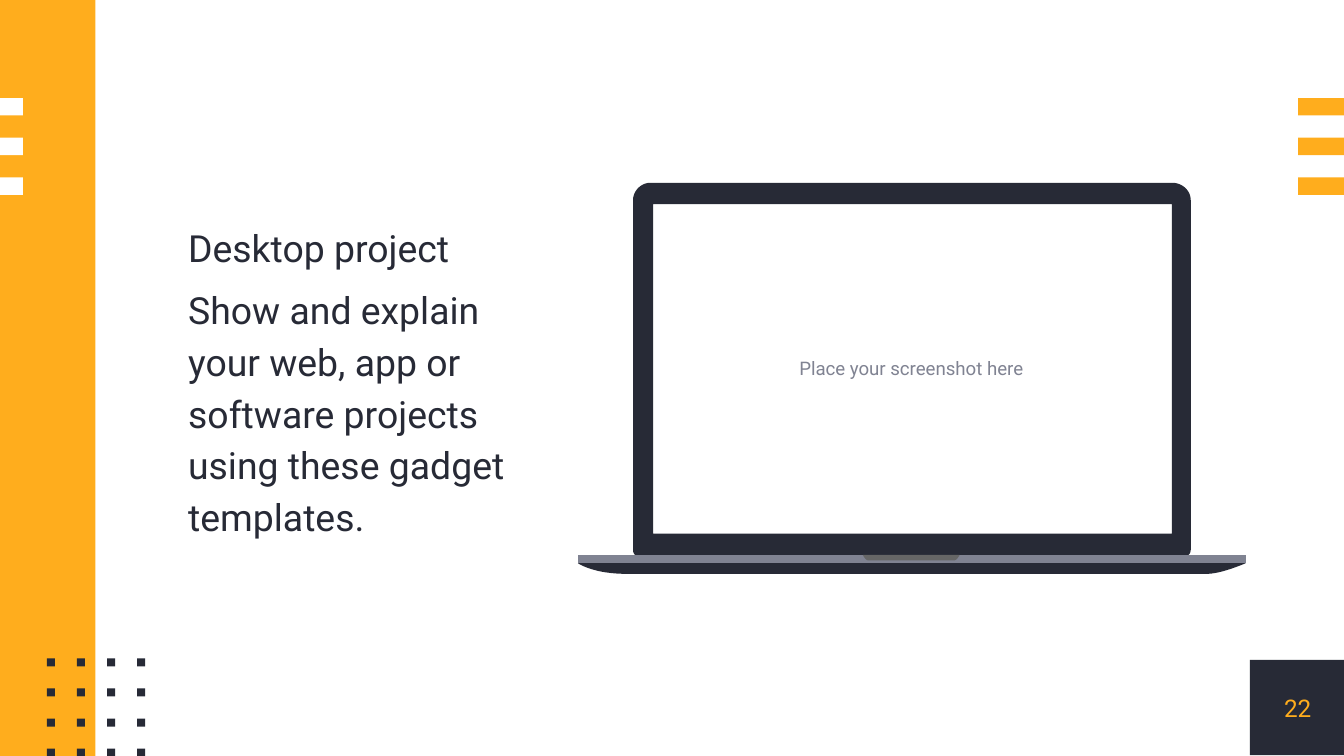
from dataclasses import dataclass
from itertools import product

from pptx import Presentation
from pptx.dml.color import RGBColor
from pptx.enum.shapes import MSO_SHAPE
from pptx.enum.text import MSO_ANCHOR, PP_ALIGN
from pptx.util import Inches, Pt

RECTANGLE = MSO_SHAPE.RECTANGLE
MIDDLE = MSO_ANCHOR.MIDDLE
LEFT, CENTER = PP_ALIGN.LEFT, PP_ALIGN.CENTER

FONT = "Roboto"
COLORS = {
    "dark": "272A36",
    "accent": "FFAD1D",
    "white": "FFFFFF",
    "muted": "808392",
    "notch": "666666",
}
SLIDE_WIDTH = 10
SLIDE_HEIGHT = SLIDE_WIDTH * 9 / 16
CURVE_STEPS = 12

Point = tuple[float, float]


@dataclass(frozen=True)
class Box:
    left: float
    top: float
    width: float
    height: float

    def emu(self) -> list[int]:
        return [Inches(v) for v in (self.left, self.top, self.width, self.height)]


@dataclass(frozen=True)
class Curve:
    """Cubic Bezier from the preceding point."""
    control1: Point
    control2: Point
    end: Point

    def sample(self, start: Point) -> list[Point]:
        points = []
        for step in range(1, CURVE_STEPS + 1):
            t = step / CURVE_STEPS
            u = 1 - t
            weights = (u**3, 3 * u * u * t, 3 * u * t * t, t**3)
            anchors = (start, self.control1, self.control2, self.end)
            points.append(tuple(
                sum(w * p[axis] for w, p in zip(weights, anchors)) for axis in (0, 1)
            ))
        return points


@dataclass(frozen=True)
class Outline:
    color: str
    contours: list[list[Point | Curve]]


@dataclass(frozen=True)
class StripeStack:
    left: float
    top: float
    width: float
    color: str


def rgb(color: str) -> RGBColor:
    return RGBColor.from_string(COLORS[color])


def paint(shape, color: str) -> None:
    shape.shadow.inherit = False
    shape.fill.solid()
    shape.fill.fore_color.rgb = rgb(color)
    shape.line.fill.background()


def add_block(slide, box: Box, color: str) -> None:
    paint(slide.shapes.add_shape(RECTANGLE, *box.emu()), color)


def flatten(contour: list[Point | Curve]) -> list[Point]:
    """Turn lines and curves into one list of points."""
    points = []
    for part in contour:
        points += part.sample(points[-1]) if isinstance(part, Curve) else [part]
    return points


def add_outline(slide, outline: Outline) -> None:
    builder = None
    for contour in outline.contours:
        start, *rest = [(Inches(x), Inches(y)) for x, y in flatten(contour)]
        if builder is None:
            builder = slide.shapes.build_freeform(*start)
        else:
            builder.move_to(*start)
        builder.add_line_segments(rest, close=True)
    paint(builder.convert_to_shape(), outline.color)


def add_text(slide, box: Box, *paragraphs: str, size: float, color: str,
             align=LEFT, inset: float = 0, line_spacing: float = 1.0,
             space_before: float = 0) -> None:
    frame = slide.shapes.add_textbox(*box.emu()).text_frame
    frame.word_wrap = True
    frame.vertical_anchor = MIDDLE
    frame.margin_left = frame.margin_right = Inches(inset)
    frame.margin_top = frame.margin_bottom = Inches(inset)
    for index, text in enumerate(paragraphs):
        paragraph = frame.add_paragraph() if index else frame.paragraphs[0]
        paragraph.alignment = align
        paragraph.line_spacing = line_spacing
        paragraph.space_before = Pt(space_before)
        run = paragraph.add_run()
        run.text = text
        run.font.name = FONT
        run.font.size = Pt(size)
        run.font.color.rgb = rgb(color)


SIDE_BAND = Box(0, 0, 0.71, SLIDE_HEIGHT)
NUMBER_TILE = Box(9.3, 4.91, 0.71, 0.71)
SCREEN = Box(4.85, 1.51, 3.86, 2.46)
BODY = Box(1.4, 0.41, 2.73, 4.81)

STRIPE_STACKS = [
    StripeStack(0, 0.73, 0.17, "white"),
    StripeStack(9.66, 0.73, 0.34, "accent"),
]
STRIPE_COUNT, STRIPE_HEIGHT = 3, 0.13
STRIPE_PITCH = 0.59 / (STRIPE_COUNT - 1)
DOT_LEFT, DOT_TOP, DOT_SIZE = 0.35, 4.9, 0.06
DOT_COUNT = 4
DOT_PITCH = 0.67 / (DOT_COUNT - 1)

LAPTOP = [
    Outline("dark", [  # lid, then the screen opening
        [(8.72, 1.36), (4.84, 1.36),
         Curve((4.77, 1.36), (4.71, 1.42), (4.71, 1.49)), (4.71, 4.09),
         Curve((4.71, 4.12), (4.73, 4.14), (4.75, 4.14)), (8.81, 4.14),
         Curve((8.84, 4.14), (8.86, 4.12), (8.86, 4.09)), (8.86, 1.49),
         Curve((8.86, 1.42), (8.8, 1.36), (8.72, 1.36))],
        [(8.72, 3.97), (4.86, 3.97), (4.86, 1.52), (8.72, 1.52)],
    ]),
    Outline("dark", [  # underside
        [(4.3, 4.19), Curve((4.3, 4.19), (4.41, 4.27), (4.66, 4.27)),
         (8.98, 4.27), Curve((9.09, 4.27), (9.27, 4.19), (9.27, 4.19))],
    ]),
    Outline("muted", [  # keyboard deck
        [(4.3, 4.19), (9.27, 4.19), (9.27, 4.13), (4.3, 4.13)],
    ]),
    Outline("notch", [
        [(6.42, 4.13), Curve((6.42, 4.13), (6.44, 4.17), (6.46, 4.17)),
         (7.1, 4.17), Curve((7.12, 4.17), (7.14, 4.13), (7.14, 4.13))],
    ]),
]


def main() -> None:
    deck = Presentation()
    deck.slide_width, deck.slide_height = Inches(SLIDE_WIDTH), Inches(SLIDE_HEIGHT)
    slide = deck.slides.add_slide(deck.slide_layouts[6])

    add_block(slide, NUMBER_TILE, "dark")
    add_block(slide, SIDE_BAND, "accent")
    for stack, row in product(STRIPE_STACKS, range(STRIPE_COUNT)):
        top = stack.top + row * STRIPE_PITCH
        add_block(slide, Box(stack.left, top, stack.width, STRIPE_HEIGHT), stack.color)
    for row, column in product(range(DOT_COUNT), repeat=2):
        add_block(slide, Box(DOT_LEFT + column * DOT_PITCH, DOT_TOP + row * DOT_PITCH,
                             DOT_SIZE, DOT_SIZE), "dark")

    add_text(slide, SCREEN, "Place your screenshot here",
             size=10, color="muted", align=CENTER, inset=0.1)
    add_text(slide, NUMBER_TILE, "22", size=13, color="accent", align=CENTER)
    for outline in LAPTOP:
        add_outline(slide, outline)
    add_text(slide, BODY, "Desktop project",
             "Show and explain your web, app or software projects "
             "using these gadget templates.",
             size=20, color="dark", line_spacing=1.15, space_before=6)

    deck.save("out.pptx")


if __name__ == "__main__":
    main()
